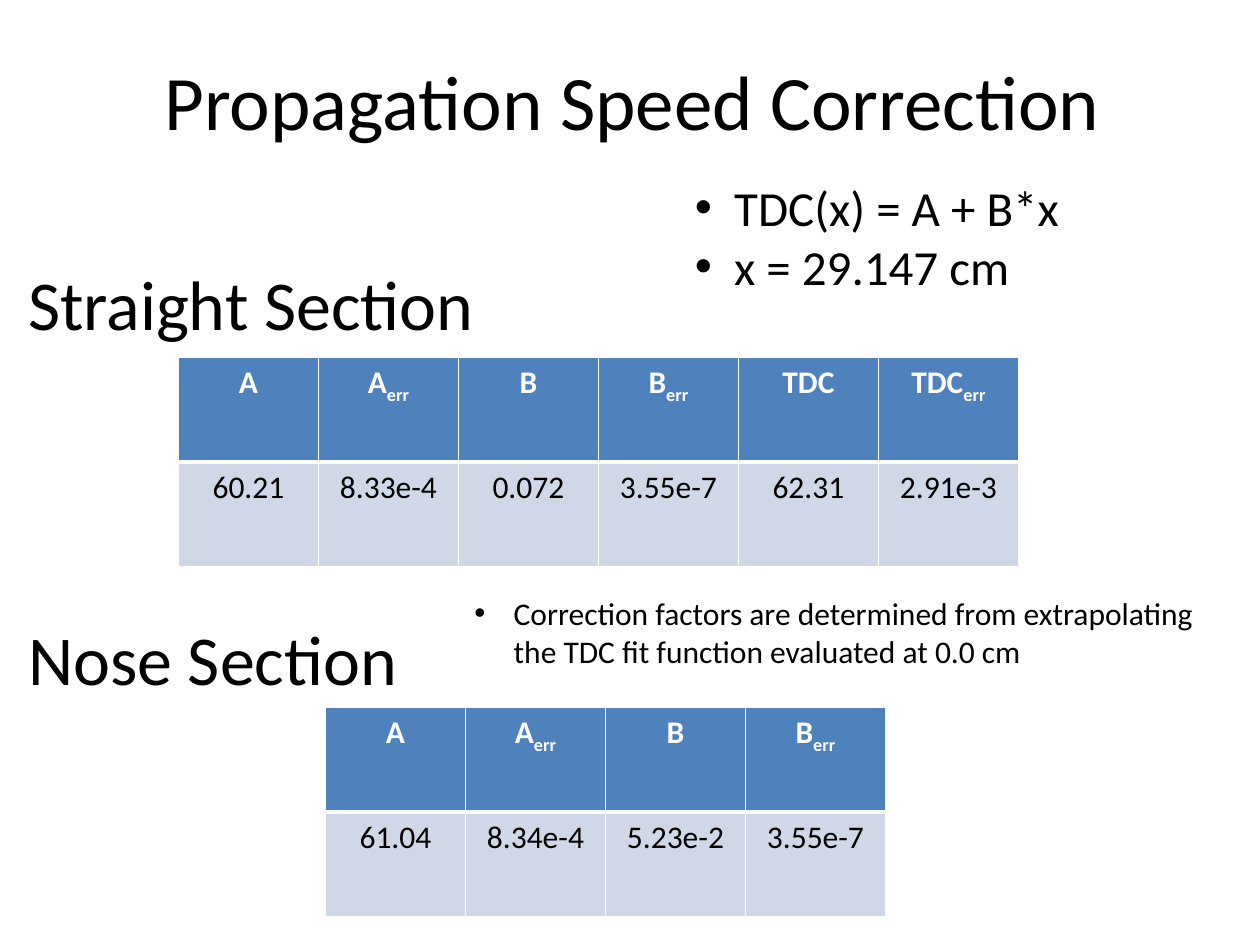
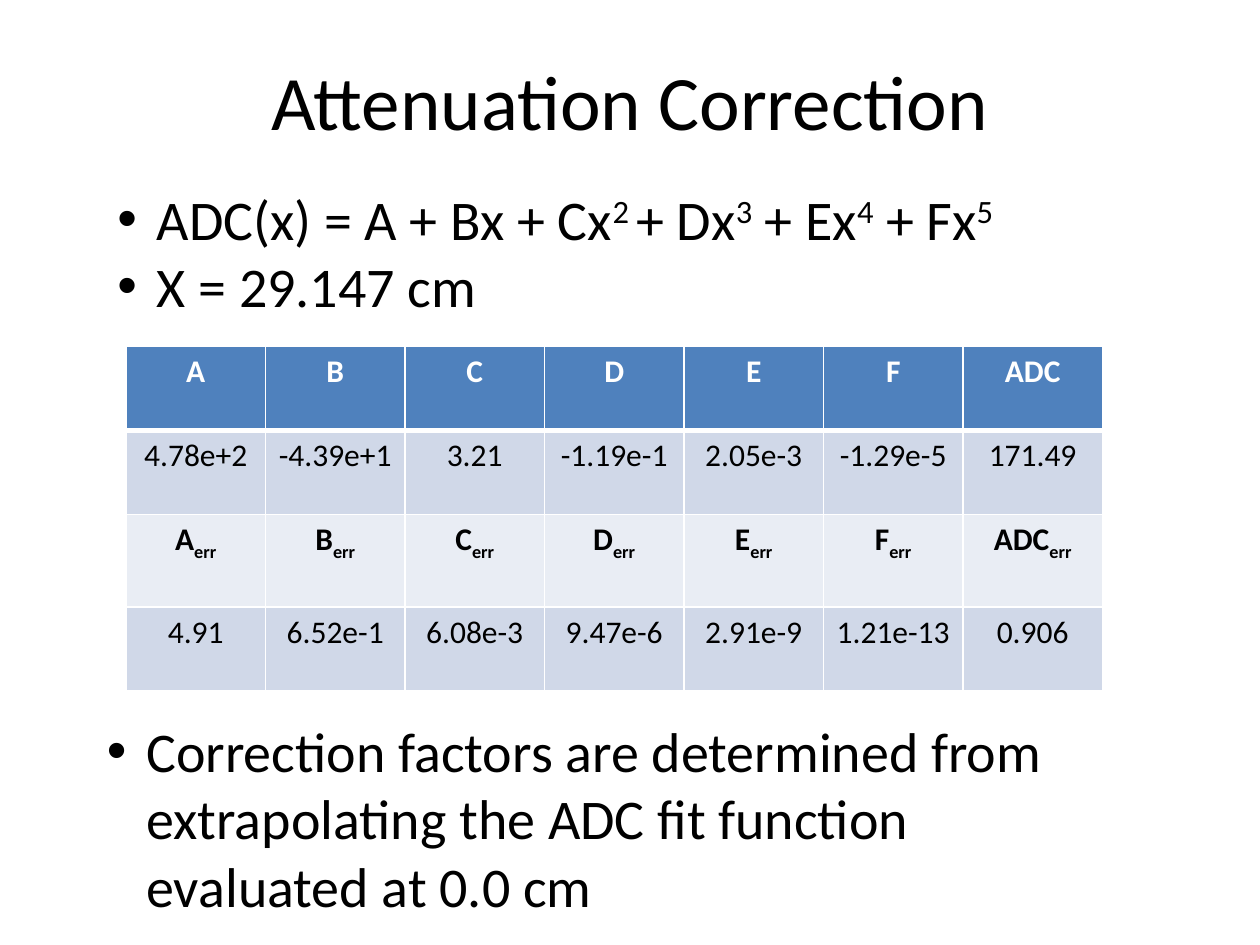
from lxml.etree import SubElement as Sub
from pptx import Presentation
from pptx.dml.color import RGBColor as RGB
from pptx.enum.text import MSO_ANCHOR as ANCHOR, PP_ALIGN as ALIGN
from pptx.oxml import parse_xml
from pptx.oxml.ns import nsdecls, qn
from pptx.util import Pt

FONT = "Calibri"
BLACK, WHITE = "000000", "FFFFFF"
HEAD, BAND, LIGHT = "4F81BD", "D0D8E8", "E9EDF4"
SHIFT = {"_": "-25000", "^": "30000"}
INDENT = 22.5


def tint(form, color):
    """Give a fill or a font colour its hex value."""
    form.rgb = RGB.from_string(color)


def write(par, text, size, color=BLACK, bold=False, align=ALIGN.LEFT):
    """Add runs split at |; a leading _ lowers a run, ^ raises it."""
    par.alignment = align
    look = {"name": FONT, "size": Pt(size), "bold": bold}
    for part in text.split("|"):
        run = par.add_run()
        run.text = part.lstrip("_^")
        for key, value in look.items():
            setattr(run.font, key, value)
        tint(run.font.color, color)
        if part[0] in SHIFT:
            run.font._element.set("baseline", SHIFT[part[0]])


def bullet(par):
    props = par._p.get_or_add_pPr()
    props.set("marL", str(Pt(INDENT)))
    props.set("indent", str(-Pt(INDENT)))
    Sub(props, qn("a:buFont"), typeface="Arial")
    Sub(props, qn("a:buChar"), char="•")


def text_box(slide, box, lines, size, dots=False, align=ALIGN.LEFT,
             anchor=ANCHOR.TOP):
    frame = slide.shapes.add_textbox(*map(Pt, box)).text_frame
    form = {"word_wrap": True, "vertical_anchor": anchor}
    for key, value in form.items():
        setattr(frame, key, value)
    for i, line in enumerate(lines):
        par = frame.add_paragraph() if i else frame.paragraphs[0]
        write(par, line, size, align=align)
        if dots:
            bullet(par)


def title(slide, text, left=36):
    text_box(slide, (left, 12, 648, 90), [text], 44,
             align=ALIGN.CENTER, anchor=ANCHOR.MIDDLE)


def border(cell, top, bottom):
    """Draw white cell edges, which must come before the fill."""
    props = cell._tc.get_or_add_tcPr()
    edges = {"L": 1, "R": 1, "T": top, "B": bottom}
    for i, (side, width) in enumerate(edges.items()):
        props.insert(i, parse_xml(
            f'<a:ln{side} {nsdecls("a")} w="{Pt(width)}"><a:solidFill>'
            f'<a:srgbClr val="{WHITE}"/></a:solidFill></a:ln{side}>'))


def grid(slide, left, top, width, heights, rows):
    """Place a table with a blue head and bands below it."""
    count = len(rows[0])
    box = (left, top, width, sum(heights))
    table = slide.shapes.add_table(len(rows), count, *map(Pt, box)).table
    table.horz_banding = False
    for col in table.columns:
        col.width = Pt(width / count)
    for i, (height, row) in enumerate(zip(heights, rows)):
        table.rows[i].height = Pt(height)
        label = i % 2 == 0
        fill = HEAD if i == 0 else LIGHT if label else BAND
        for j, text in enumerate(row):
            cell = table.cell(i, j)
            cell.fill.solid()
            tint(cell.fill.fore_color, fill)
            border(cell, 3 if i == 1 else 1, 3 if i == 0 else 1)
            write(cell.text_frame.paragraphs[0], text, 18,
                  BLACK if i else WHITE, label, ALIGN.CENTER)


def note(kind):
    return ("Correction factors are determined from extrapolating "
            f"the {kind} fit function evaluated at 0.0 cm")


def speed(slide):
    title(slide, "Propagation Speed Correction", 37.5)
    text_box(slide, (390, 98, 246, 75),
             ["TDC(x) = A + B*x", "x = 29.147 cm"], 28, dots=True)
    names = ["A", "A|_err", "B", "B|_err", "TDC", "TDC|_err"]
    # Straight section
    text_box(slide, (9, 145.5, 288, 55.5), ["Straight Section"], 40)
    grid(slide, 102, 204, 480, [60, 60], [
        names,
        ["60.21", "8.33e-4", "0.072", "3.55e-7", "62.31", "2.91e-3"]])
    # Nose section
    text_box(slide, (9, 348, 237, 55.5), ["Nose Section"], 40)
    grid(slide, 186, 404, 320, [60, 60], [
        names[:4], ["61.04", "8.34e-4", "5.23e-2", "3.55e-7"]])
    text_box(slide, (264, 336, 438, 51), [note("TDC")], 18, dots=True)


def fading(slide):
    title(slide, "Attenuation Correction")
    # Fit function
    text_box(slide, (60, 102, 582, 85),
             ["ADC(x) = A + Bx + Cx|^2 |+ Dx|^3| + Ex|^4| + Fx|^5",
              "X = 29.147 cm"], 32, dots=True)
    # Fit values and their errors
    names = [*"ABCDEF", "ADC"]
    grid(slide, 72, 198, 558, [48, 48, 53, 48], [
        names,
        ["4.78e+2", "-4.39e+1", "3.21", "-1.19e-1", "2.05e-3", "-1.29e-5",
         "171.49"],
        [name + "|_err" for name in names],
        ["4.91", "6.52e-1", "6.08e-3", "9.47e-6", "2.91e-9", "1.21e-13",
         "0.906"]])
    text_box(slide, (54, 406, 582, 124), [note("ADC")], 32, dots=True)


def main():
    deck = Presentation()
    deck.slide_width, deck.slide_height = Pt(720), Pt(540)
    for build in (speed, fading):
        build(deck.slides.add_slide(deck.slide_layouts[6]))
    deck.save("out.pptx")


if __name__ == "__main__":
    main()
